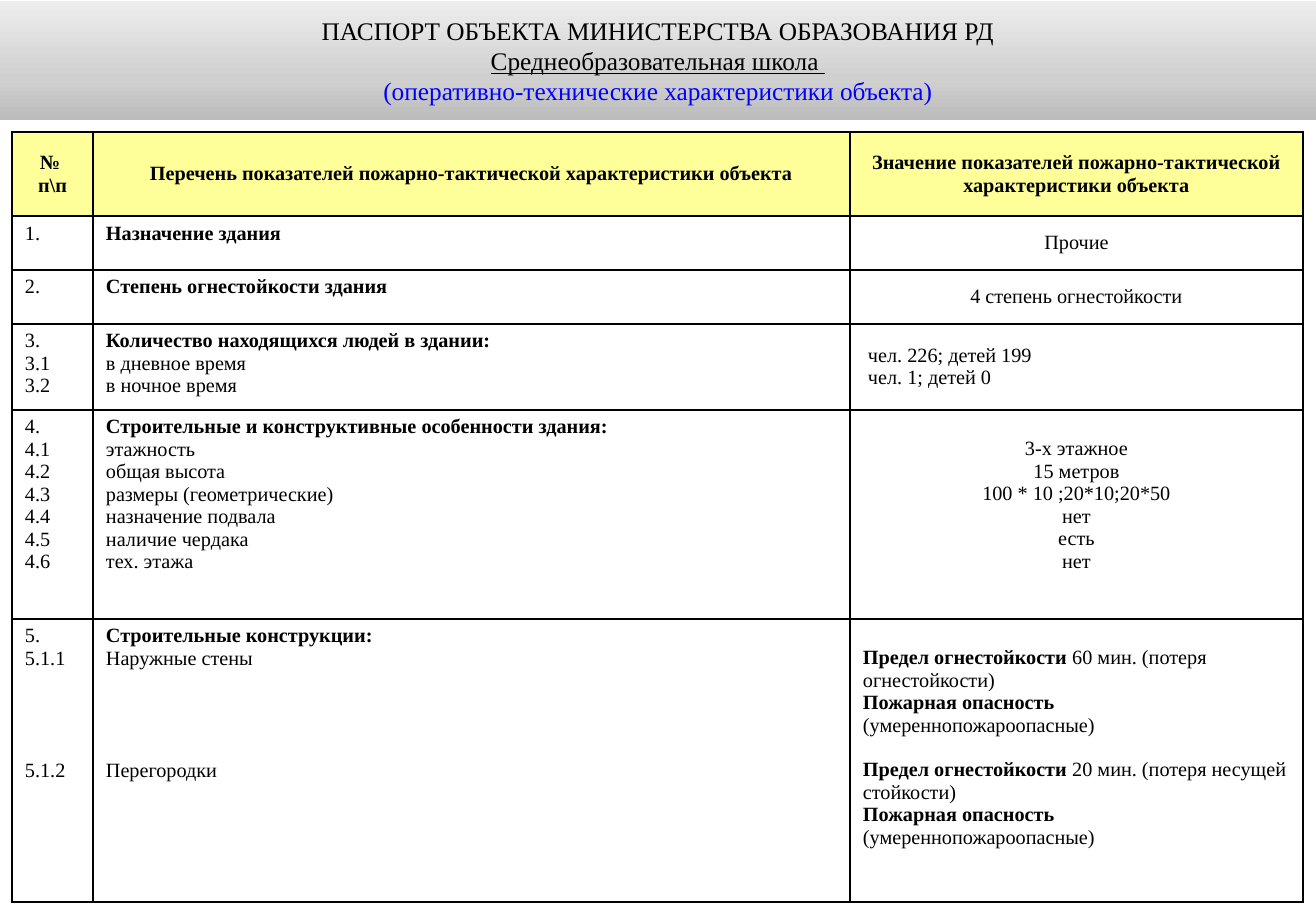
from collections import namedtuple

from lxml.etree import SubElement
from pptx import Presentation
from pptx.dml.color import RGBColor
from pptx.enum.text import MSO_ANCHOR as Anchor, MSO_AUTO_SIZE as AutoSize, PP_ALIGN as Align
from pptx.oxml.ns import qn
from pptx.util import Emu, Pt

PX = 914400 / 121.5
FONT = "Times New Roman"
COLORS = {
    "text": "000000",
    "subtitle": "0000FF",
    "header": "FFFF99",
    "cell": "FFFFFF",
    "border": "000000",
}
BANNER_STOPS = [(0, "BCBCBC"), (35, "D0D0D0"), (100, "EDEDED")]
COLUMN_WIDTHS = [81, 757, 453]
ROW_HEIGHTS = [84, 54, 54, 86, 209, 283]
INSET_X, INSET_Y = 13, 6
LINE_GAP = 22       # one line left free
WALL_GAP = 90       # four lines left free

Line = namedtuple("Line", "bold plain gap", defaults=("", "", 0))
Cell = namedtuple("Cell", "lines align anchor left top",
                  defaults=(Align.LEFT, Anchor.TOP, INSET_X, INSET_Y))


def px(value):
    return Emu(round(value * PX))


def rgb(name):
    return RGBColor.from_string(COLORS[name])


def plain(*texts):
    return [Line(plain=text) for text in texts]


def centred(lines, **options):
    return Cell(lines, Align.CENTER, **options)


def header(*texts):
    return centred([Line(text) for text in texts], anchor=Anchor.MIDDLE)


FIRE_LIMIT = "Предел огнестойкости "
FIRE_HAZARD = "Пожарная опасность"
HAZARD_CLASS = "(умереннопожароопасные)"

ROWS = [
    [header("№ ", "п\\п"),
     header("Перечень показателей пожарно-тактической характеристики объекта"),
     header("Значение показателей пожарно-тактической характеристики объекта")],
    [Cell(plain("1.")),
     Cell([Line("Назначение здания")]),
     centred(plain("Прочие"), anchor=Anchor.MIDDLE)],
    [Cell(plain("2.")),
     Cell([Line("Степень огнестойкости здания")]),
     centred(plain("4 степень огнестойкости"), anchor=Anchor.MIDDLE)],
    [Cell(plain("3.", "3.1", "3.2")),
     Cell([Line("Количество находящихся людей в здании:"),
           *plain("в дневное время", "в ночное время")]),
     Cell(plain("чел. 226; детей 199", "чел. 1; детей 0"),
          anchor=Anchor.MIDDLE, left=INSET_X + 5)],
    [Cell(plain("4.", "4.1", "4.2", "4.3", "4.4", "4.5", "4.6")),
     Cell([Line("Строительные и конструктивные особенности здания:"),
           *plain("этажность", "общая высота", "размеры (геометрические)",
                  "назначение подвала", "наличие чердака", "тех. этажа")]),
     centred(plain("3-х этажное", "15 метров", "100 * 10 ;20*10;20*50",
                   "нет", "есть", "нет"), top=INSET_Y + LINE_GAP)],
    [Cell([*plain("5.", "5.1.1"), Line(plain="5.1.2", gap=WALL_GAP)]),
     Cell([Line("Строительные конструкции:"), Line(plain="Наружные стены"),
           Line(plain="Перегородки", gap=WALL_GAP)]),
     Cell([Line(FIRE_LIMIT, "60 мин. (потеря огнестойкости)"),
           Line(FIRE_HAZARD + " ", HAZARD_CLASS),
           Line(FIRE_LIMIT, "20 мин. (потеря несущей стойкости)", LINE_GAP),
           Line(FIRE_HAZARD),
           Line(plain=HAZARD_CLASS)], top=INSET_Y + LINE_GAP)],
]


def add_run(paragraph, text, size, color="text", bold=False, underline=False):
    run = paragraph.add_run()
    run.text = text
    font = run.font
    font.name, font.size = FONT, Pt(size)
    font.bold, font.underline = bold, underline
    font.color.rgb = rgb(color)


def next_paragraph(frame, index):
    return frame.add_paragraph() if index else frame.paragraphs[0]


def fill_banner(shape):
    """Shade the shape from dark at the bottom to light at the top."""
    shape.fill.gradient()
    shape.fill.gradient_angle = 90
    stops = shape.element.spPr.find(".//" + qn("a:gsLst"))
    for stop in list(stops):
        stops.remove(stop)
    for position, color in BANNER_STOPS:
        stop = SubElement(stops, qn("a:gs"), pos=str(position * 1000))
        SubElement(stop, qn("a:srgbClr"), val=color)


def build_banner(slide, left, top, width, height):
    title = slide.shapes.title
    title.left, title.top, title.width, title.height = map(px, (left, top, width, height))
    fill_banner(title)
    frame = title.text_frame
    frame.word_wrap = True
    frame.auto_size = AutoSize.NONE
    frame.vertical_anchor = Anchor.MIDDLE
    lines = [
        ("ПАСПОРТ ОБЪЕКТА МИНИСТЕРСТВА ОБРАЗОВАНИЯ РД", "text", False),
        ("Среднеобразовательная школа ", "text", True),
        ("(оперативно-технические характеристики объекта)", "subtitle", False),
    ]
    for index, (text, color, underline) in enumerate(lines):
        paragraph = next_paragraph(frame, index)
        paragraph.alignment = Align.CENTER
        add_run(paragraph, text, 15, color, underline=underline)


def add_borders(cell):
    properties = cell._tc.get_or_add_tcPr()
    for side in ("lnL", "lnR", "lnT", "lnB"):
        line = SubElement(properties, qn("a:" + side), w=str(Pt(1)))
        fill = SubElement(line, qn("a:solidFill"))
        SubElement(fill, qn("a:srgbClr"), val=COLORS["border"])


def fill_cell(cell, content, color):
    add_borders(cell)
    cell.fill.solid()
    cell.fill.fore_color.rgb = rgb(color)
    cell.vertical_anchor = content.anchor
    cell.margin_left, cell.margin_right = px(content.left), px(INSET_X)
    cell.margin_top, cell.margin_bottom = px(content.top), px(INSET_Y)
    for index, line in enumerate(content.lines):
        paragraph = next_paragraph(cell.text_frame, index)
        paragraph.alignment = content.align
        if line.gap:
            paragraph.space_before = px(line.gap)
        for text, bold in ((line.bold, True), (line.plain, False)):
            if text:
                add_run(paragraph, text, 12, bold=bold)


def build_table(slide, left, top):
    frame = slide.shapes.add_table(
        len(ROWS), len(COLUMN_WIDTHS), px(left), px(top),
        px(sum(COLUMN_WIDTHS)), px(sum(ROW_HEIGHTS)))
    table = frame.table
    table.first_row = table.horz_banding = False
    for column, width in zip(table.columns, COLUMN_WIDTHS):
        column.width = px(width)
    for row_index, (row, height) in enumerate(zip(table.rows, ROW_HEIGHTS)):
        row.height = px(height)
        color = "cell" if row_index else "header"
        for cell, content in zip(row.cells, ROWS[row_index]):
            fill_cell(cell, content, color)


def main():
    presentation = Presentation()
    presentation.slide_width, presentation.slide_height = px(1316), px(911)
    slide = presentation.slides.add_slide(presentation.slide_layouts[5])
    build_banner(slide, 0, 1, 1316, 119)
    build_table(slide, 12, 132)
    presentation.save("out.pptx")


if __name__ == "__main__":
    main()
